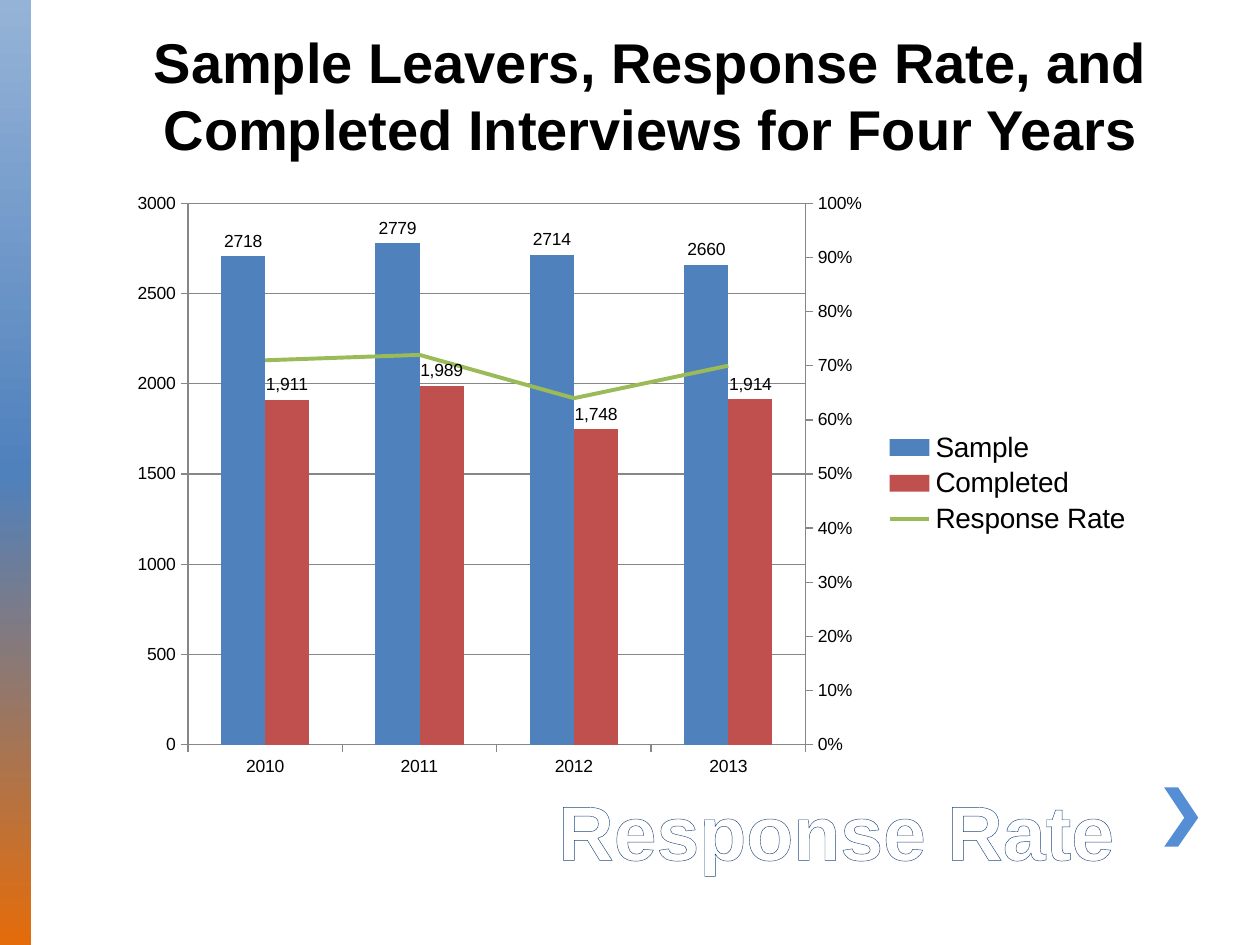
from copy import deepcopy

from lxml import etree
from pptx import Presentation
from pptx import util as u
from pptx.chart import data as chart_data
from pptx.dml.color import RGBColor
from pptx.enum import chart as c, shapes, text
from pptx.oxml import parse_xml
from pptx.oxml import ns

BLACK = RGBColor(0, 0, 0)
WHITE = RGBColor(255, 255, 255)
NAVY = RGBColor(0x1F, 0x49, 0x7D)
BLUE = RGBColor(0x4F, 0x81, 0xBD)
LIGHT_BLUE = RGBColor(0x95, 0xB3, 0xD7)
ARROW_BLUE = RGBColor(0x55, 0x8E, 0xD5)
RED = RGBColor(0xC0, 0x50, 0x4D)
GREEN = RGBColor(0x9B, 0xBB, 0x59)
ORANGE = RGBColor(0xE4, 0x6C, 0x0A)
GRAY = RGBColor(0x87, 0x87, 0x87)

YEARS = ["2010", "2011", "2012", "2013"]
SERIES = [
    ("Sample", [2708, 2779, 2714, 2660], "0", BLUE),
    ("Completed", [1911, 1989, 1748, 1914], "#,##0", RED),
    ("Response Rate", [0.71, 0.72, 0.64, 0.7], "0%", GREEN),
]

PLOT_LAYOUT = f"""<c:layout {ns.nsdecls('c')}><c:manualLayout>
<c:layoutTarget val="inner"/><c:xMode val="edge"/><c:yMode val="edge"/>
<c:x val="0.07"/><c:y val="0.04"/><c:w val="0.6"/><c:h val="0.89"/>
</c:manualLayout></c:layout>"""

RATE_PLOT = f"""<c:lineChart {ns.nsdecls('c')}><c:grouping val="standard"/>
<c:varyColors val="0"/><c:marker val="1"/>
<c:axId val="5001"/><c:axId val="5002"/></c:lineChart>"""

RATE_CATEGORY_AXIS = f"""<c:catAx {ns.nsdecls('c')}><c:axId val="5001"/>
<c:scaling><c:orientation val="minMax"/></c:scaling><c:delete val="1"/>
<c:axPos val="b"/><c:crossAx val="5002"/><c:crosses val="autoZero"/></c:catAx>"""

RATE_VALUE_AXIS = f"""<c:valAx {ns.nsdecls('c', 'a')}><c:axId val="5002"/>
<c:scaling><c:orientation val="minMax"/><c:max val="1"/><c:min val="0"/></c:scaling>
<c:delete val="0"/><c:axPos val="r"/><c:numFmt formatCode="0%" sourceLinked="0"/>
<c:majorTickMark val="out"/><c:minorTickMark val="none"/><c:tickLblPos val="nextTo"/>
<c:spPr><a:ln w="9525"><a:solidFill><a:srgbClr val="{GRAY}"/></a:solidFill></a:ln></c:spPr>
<c:crossAx val="5001"/><c:crosses val="max"/><c:majorUnit val="0.1"/></c:valAx>"""


class SlideBuilder:
    font_name = "Arial"

    def __init__(self, slide):
        self.slide = slide

    def style_font(self, font, size, color, bold=False):
        font.name = self.font_name
        font.size = u.Pt(size)
        font.bold = bold
        font.color.rgb = color

    def style_line(self, line, color, width=0.75):
        line.color.rgb = color
        line.width = u.Pt(width)

    def remove_children(self, parent, tag):
        for child in parent.findall(ns.qn(tag)):
            parent.remove(child)

    def gradient_bar(self, left, top, width, height, stops):
        shape = self.slide.shapes.add_shape(
            shapes.MSO_SHAPE.RECTANGLE, *map(u.Inches, (left, top, width, height)))
        shape.shadow.inherit = False
        shape.line.fill.background()
        shape.fill.gradient()
        shape.fill.gradient_angle = 270
        stop_list = shape._element.spPr.find(".//" + ns.qn("a:gsLst"))
        stop_list.append(deepcopy(stop_list[-1]))
        for stop, (position, color) in zip(shape.fill.gradient_stops, stops):
            stop.position = position
            stop.color.rgb = color

    def outline_shape(self, points, color):
        start, *others = [(u.Inches(x), u.Inches(y)) for x, y in points]
        builder = self.slide.shapes.build_freeform(*start)
        builder.add_line_segments(others, close=True)
        shape = builder.convert_to_shape()
        shape.shadow.inherit = False
        shape.fill.solid()
        shape.fill.fore_color.rgb = color
        shape.line.fill.background()

    def text_box(self, left, top, width, height, content, size, color,
                 align=text.PP_ALIGN.LEFT, anchor=text.MSO_ANCHOR.TOP,
                 indent=0.1, outline=None):
        shape = self.slide.shapes.add_textbox(*map(u.Inches, (left, top, width, height)))
        frame = shape.text_frame
        frame.word_wrap = True
        frame.vertical_anchor = anchor
        frame.margin_left = u.Inches(indent)
        paragraph = frame.paragraphs[0]
        paragraph.alignment = align
        self.style_font(paragraph.font, size, color, bold=True)
        run = paragraph.add_run()
        run.text = content
        if outline is not None:
            line = etree.Element(ns.qn("a:ln"), w=str(u.Pt(1)))
            fill = etree.SubElement(line, ns.qn("a:solidFill"))
            etree.SubElement(fill, ns.qn("a:srgbClr"), val=str(outline))
            run._r.get_or_add_rPr().insert(0, line)

    def rate_chart(self, left, top, width, height):
        data = chart_data.CategoryChartData()
        data.categories = YEARS
        for name, values, number_format, _ in SERIES:
            data.add_series(name, values, number_format)
        chart = self.slide.shapes.add_chart(
            c.XL_CHART_TYPE.COLUMN_CLUSTERED,
            *map(u.Inches, (left, top, width, height)), data).chart
        self.style_font(chart.font, 10, BLACK)
        chart.has_title = False
        chart.has_legend = True
        chart.legend.position = c.XL_LEGEND_POSITION.RIGHT
        chart.legend.include_in_layout = False
        self.style_font(chart.legend.font, 16, BLACK)
        for axis in (chart.category_axis, chart.value_axis):
            axis.major_tick_mark = c.XL_TICK_MARK.OUTSIDE
            self.style_line(axis.format.line, GRAY)
        chart.value_axis.minimum_scale = 0
        chart.value_axis.maximum_scale = 3000
        chart.value_axis.major_unit = 500
        self.style_line(chart.value_axis.major_gridlines.format.line, GRAY)
        self.move_rate_to_second_axis(chart)
        self.style_series(chart)

    def move_rate_to_second_axis(self, chart):
        columns = chart.plots[0]
        columns.gap_width = 150
        columns.overlap = 0
        columns.vary_by_categories = False
        area = chart._chartSpace.find(".//" + ns.qn("c:plotArea"))
        column_plot = area.find(ns.qn("c:barChart"))
        rate = column_plot.findall(ns.qn("c:ser"))[-1]
        self.remove_children(rate, "c:invertIfNegative")
        rate_plot = parse_xml(RATE_PLOT)
        rate_plot.insert(2, rate)
        column_plot.addnext(rate_plot)
        value_axis = area.find(ns.qn("c:valAx"))
        for axis in (RATE_VALUE_AXIS, RATE_CATEGORY_AXIS):
            value_axis.addnext(parse_xml(axis))
        self.remove_children(area, "c:layout")
        area.insert(0, parse_xml(PLOT_LAYOUT))

    def style_series(self, chart):
        columns, rates = chart.plots
        for series, (_, _, number_format, color) in zip(columns.series, SERIES):
            series.format.fill.solid()
            series.format.fill.fore_color.rgb = color
            labels = series.data_labels
            labels.show_value = True
            labels.number_format = number_format
            labels.number_format_is_linked = False
            labels.position = c.XL_LABEL_POSITION.OUTSIDE_END
            self.style_font(labels.font, 10, BLACK)
        label = columns.series[0].points[0].data_label
        label.text_frame.text = "2718"
        self.style_font(label.text_frame.paragraphs[0].runs[0].font, 10, BLACK)
        label.position = c.XL_LABEL_POSITION.OUTSIDE_END
        rate = rates.series[0]
        rate.smooth = False
        rate.marker.style = c.XL_MARKER_STYLE.NONE
        self.style_line(rate.format.line, GREEN, 2.25)


def main():
    presentation = Presentation()
    presentation.slide_width = u.Inches(10)
    presentation.slide_height = u.Inches(7.5)
    builder = SlideBuilder(presentation.slides.add_slide(presentation.slide_layouts[6]))
    builder.gradient_bar(0, 0, 0.25, 7.5, [(0, LIGHT_BLUE), (0.5, BLUE), (1, ORANGE)])
    builder.outline_shape(
        [(9.35, 6.25), (9.24, 6.25), (9.4, 6.49), (9.24, 6.72), (9.35, 6.72), (9.51, 6.49)],
        ARROW_BLUE)
    builder.text_box(1.33, 5.75, 7.92, 1.25, "Response Rate", 44, WHITE,
                     anchor=text.MSO_ANCHOR.BOTTOM, indent=3.1, outline=NAVY)
    builder.rate_chart(0.92, 1.42, 8.17, 4.83)
    builder.text_box(1.08, 0.17, 8.17, 1.18,
                     "Sample Leavers, Response Rate, and Completed Interviews for Four Years",
                     32, BLACK, align=text.PP_ALIGN.CENTER)
    presentation.save("out.pptx")


if __name__ == "__main__":
    main()
